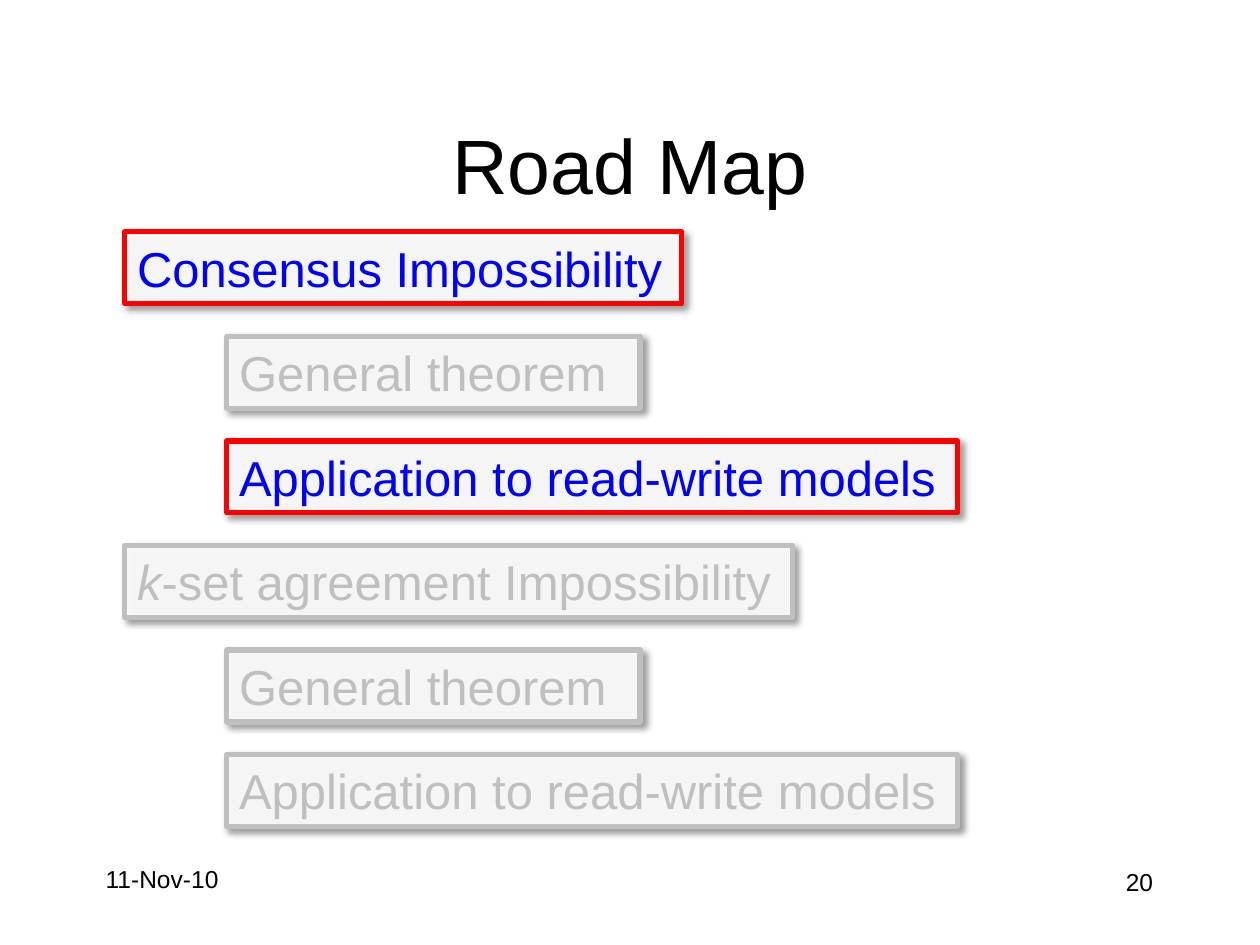
from dataclasses import dataclass

import lxml.etree
import pptx
import pptx.dml.color
import pptx.enum.shapes
import pptx.enum.text
import pptx.oxml.ns
import pptx.util
from pptx.util import Inches

COLORS = {
    "paper": "FFFFFF",
    "ink": "000000",
    "active_line": "FF0000",
    "active_text": "0000FF",
    "muted": "BFBFBF",
}
ALIGN = pptx.enum.text.PP_ALIGN
ANCHOR = pptx.enum.text.MSO_ANCHOR

TOPIC_TOP, TOPIC_PITCH, TOPIC_HEIGHT = 1.84, 0.83, 0.57
LEVEL_LEFTS = (0.99, 1.8)


@dataclass
class Label:
    text: str
    left: float
    top: float
    width: float
    height: float
    size: int
    align: ALIGN = ALIGN.LEFT
    anchor: ANCHOR = ANCHOR.TOP


@dataclass
class Topic:
    text: str
    level: int
    width: float
    active: bool = False
    italic_prefix: str = ""


LABELS = [
    Label("Road Map", 0.75, 0.67, 8.5, 1.25, 44, ALIGN.CENTER, ANCHOR.MIDDLE),
    Label("11-Nov-10", 0.74, 6.81, 2.08, 0.5, 14),
    Label("20", 7.17, 6.83, 2.08, 0.5, 14, ALIGN.RIGHT),
]
TOPICS = [
    Topic("Consensus Impossibility", 0, 4.42, active=True),
    Topic("General theorem", 1, 3.28),
    Topic("Application to read-write models", 1, 5.8, active=True),
    Topic("-set agreement Impossibility", 0, 5.3, italic_prefix="k"),
    Topic("General theorem", 1, 3.28),
    Topic("Application to read-write models", 1, 5.8),
]


def rgb(name: str) -> pptx.dml.color.RGBColor:
    return pptx.dml.color.RGBColor.from_string(COLORS[name])


def add_run(paragraph, text: str, color: str, size: int, italic: bool = False) -> None:
    run = paragraph.add_run()
    run.text = text
    formats = {"name": "Arial", "size": pptx.util.Pt(size), "italic": italic}
    for attribute, value in formats.items():
        setattr(run.font, attribute, value)
    run.font.color.rgb = rgb(color)


def set_frame(shape, align: ALIGN, anchor: ANCHOR):
    """Set wrapping and alignment, and return the first paragraph."""
    frame = shape.text_frame
    formats = {"word_wrap": True, "vertical_anchor": anchor}
    for attribute, value in formats.items():
        setattr(frame, attribute, value)
    paragraph = frame.paragraphs[0]
    paragraph.alignment = align
    return paragraph


def add_color_alpha(color_element, percent: int) -> None:
    alpha = lxml.etree.SubElement(color_element, pptx.oxml.ns.qn("a:alpha"))
    alpha.set("val", str(percent * 1000))


def add_drop_shadow(shape) -> None:
    """Give the shape a soft shadow towards its lower right."""
    qn = pptx.oxml.ns.qn
    shape.shadow.inherit = False
    effects = shape._element.spPr.find(qn("a:effectLst"))
    shadow = lxml.etree.SubElement(effects, qn("a:outerShdw"))
    formats = {
        "blurRad": pptx.util.Pt(4),
        "dist": pptx.util.Pt(3),
        "dir": 45 * 60000,
        "algn": "tl",
        "rotWithShape": 0,
    }
    for attribute, value in formats.items():
        shadow.set(attribute, str(value))
    color = lxml.etree.SubElement(shadow, qn("a:srgbClr"), val=COLORS["ink"])
    add_color_alpha(color, 40)


def add_label(slide, label: Label) -> None:
    box = slide.shapes.add_textbox(
        Inches(label.left), Inches(label.top), Inches(label.width), Inches(label.height)
    )
    paragraph = set_frame(box, label.align, label.anchor)
    add_run(paragraph, label.text, "ink", label.size)


def add_topic(slide, topic: Topic, row: int) -> None:
    shape = slide.shapes.add_shape(
        pptx.enum.shapes.MSO_SHAPE.RECTANGLE,
        Inches(LEVEL_LEFTS[topic.level]),
        Inches(TOPIC_TOP + row * TOPIC_PITCH),
        Inches(topic.width),
        Inches(TOPIC_HEIGHT),
    )
    shape.fill.solid()
    shape.fill.fore_color.rgb = rgb("paper")
    fill_color = shape._element.spPr.find(
        pptx.oxml.ns.qn("a:solidFill") + "/" + pptx.oxml.ns.qn("a:srgbClr")
    )
    add_color_alpha(fill_color, 90)
    shape.line.color.rgb = rgb("active_line" if topic.active else "muted")
    shape.line.width = pptx.util.Pt(3)
    add_drop_shadow(shape)

    paragraph = set_frame(shape, ALIGN.LEFT, ANCHOR.TOP)
    text_color = "active_text" if topic.active else "muted"
    if topic.italic_prefix:
        add_run(paragraph, topic.italic_prefix, text_color, 28, italic=True)
    add_run(paragraph, topic.text, text_color, 28)


def main() -> None:
    presentation = pptx.Presentation()
    presentation.slide_width = Inches(10)
    presentation.slide_height = Inches(7.5)
    slide = presentation.slides.add_slide(presentation.slide_layouts[6])
    slide.background.fill.solid()
    slide.background.fill.fore_color.rgb = rgb("paper")
    for label in LABELS:
        add_label(slide, label)
    for row, topic in enumerate(TOPICS):
        add_topic(slide, topic, row)
    presentation.save("out.pptx")


if __name__ == "__main__":
    main()
